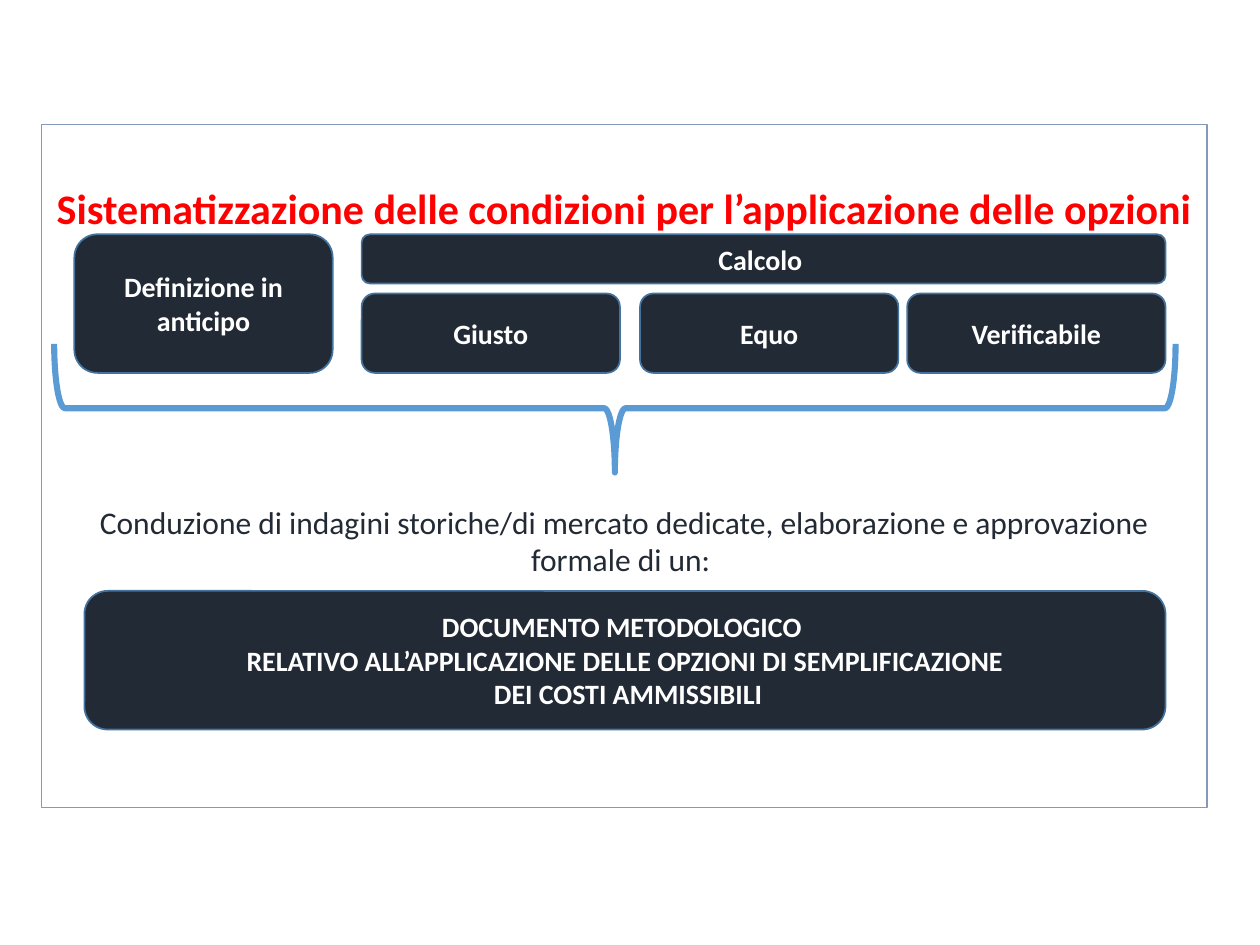
from pptx import Presentation
from pptx.dml.color import RGBColor
from pptx.enum.shapes import MSO_SHAPE
from pptx.enum.text import MSO_ANCHOR, PP_ALIGN
from pptx.util import Inches, Pt

WIDE, TALL = Inches(10), Inches(7.5)
COLS, ROWS = 100, 75
DARK, WHITE, RED = "222A35", "FFFFFF", "FF0000"
EDGE, RIM, BLUE = "43739E", "8599BD", "5B9BD5"


def tint(code):
    return RGBColor.from_string(code)


def col(n):
    return round(WIDE * n / COLS)


def row(n):
    return round(TALL * n / ROWS)


def draw(slide, kind, area, fill, line, width):
    x, y, w, h = area
    shape = slide.shapes.add_shape(kind, col(x), row(y), col(w), row(h))
    shape.shadow.inherit = False
    if fill:
        shape.fill.solid()
        shape.fill.fore_color.rgb = tint(fill)
    else:
        shape.fill.background()
    shape.line.color.rgb = tint(line)
    shape.line.width = Pt(width)
    return shape


def write(para, text, size=16, color=WHITE, bold=True, before=0):
    para.alignment = PP_ALIGN.CENTER
    if before:
        para.space_before = Pt(before)
    run = para.add_run()
    run.text = text
    font = run.font
    font.name, font.size, font.bold = "Calibri", Pt(size), bold
    font.color.rgb = tint(color)


def tile(slide, area, *lines):
    shape = draw(slide, MSO_SHAPE.ROUNDED_RECTANGLE, area, DARK, EDGE, 1)
    frame = shape.text_frame
    frame.word_wrap = True
    frame.vertical_anchor = MSO_ANCHOR.MIDDLE
    for i, line in enumerate(lines):
        write(frame.add_paragraph() if i else frame.paragraphs[0], line)


def panel(slide):
    shape = draw(slide, MSO_SHAPE.RECTANGLE, (3.3, 9.9, 92.5, 54.2), WHITE, RIM, 0.75)
    frame = shape.text_frame
    frame.word_wrap = True
    frame.vertical_anchor = MSO_ANCHOR.TOP
    frame.margin_top = row(4.6)
    write(frame.paragraphs[0],
          "Sistematizzazione delle condizioni per l’applicazione delle opzioni ",
          size=24, color=RED)
    write(frame.add_paragraph(),
          "Conduzione di indagini storiche/di mercato dedicate, "
          "elaborazione e approvazione formale di un: ",
          size=18, color=DARK, bold=False, before=154)


def brace(slide):
    shape = draw(slide, MSO_SHAPE.RIGHT_BRACE, (43.7, -12.1, 10.2, 89), None, BLUE, 3.5)
    shape.rotation = 90


def main():
    deck = Presentation()
    deck.slide_width, deck.slide_height = WIDE, TALL
    slide = deck.slides.add_slide(deck.slide_layouts[6])
    panel(slide)
    tile(slide, (5.9, 18.6, 20.5, 11), "Definizione in anticipo")
    tile(slide, (28.7, 18.6, 63.8, 3.9), "Calcolo ")
    for x, word in ((28.7, "Giusto"), (50.8, "Equo"), (72, "Verificabile")):
        tile(slide, (x, 23.3, 20.5, 6.3), word)
    brace(slide)
    tile(slide, (6.7, 46.9, 85.8, 11),
         "DOCUMENTO METODOLOGICO ",
         "RELATIVO ALL’APPLICAZIONE DELLE OPZIONI DI SEMPLIFICAZIONE",
         " DEI COSTI AMMISSIBILI")
    deck.save("out.pptx")


if __name__ == "__main__":
    main()
